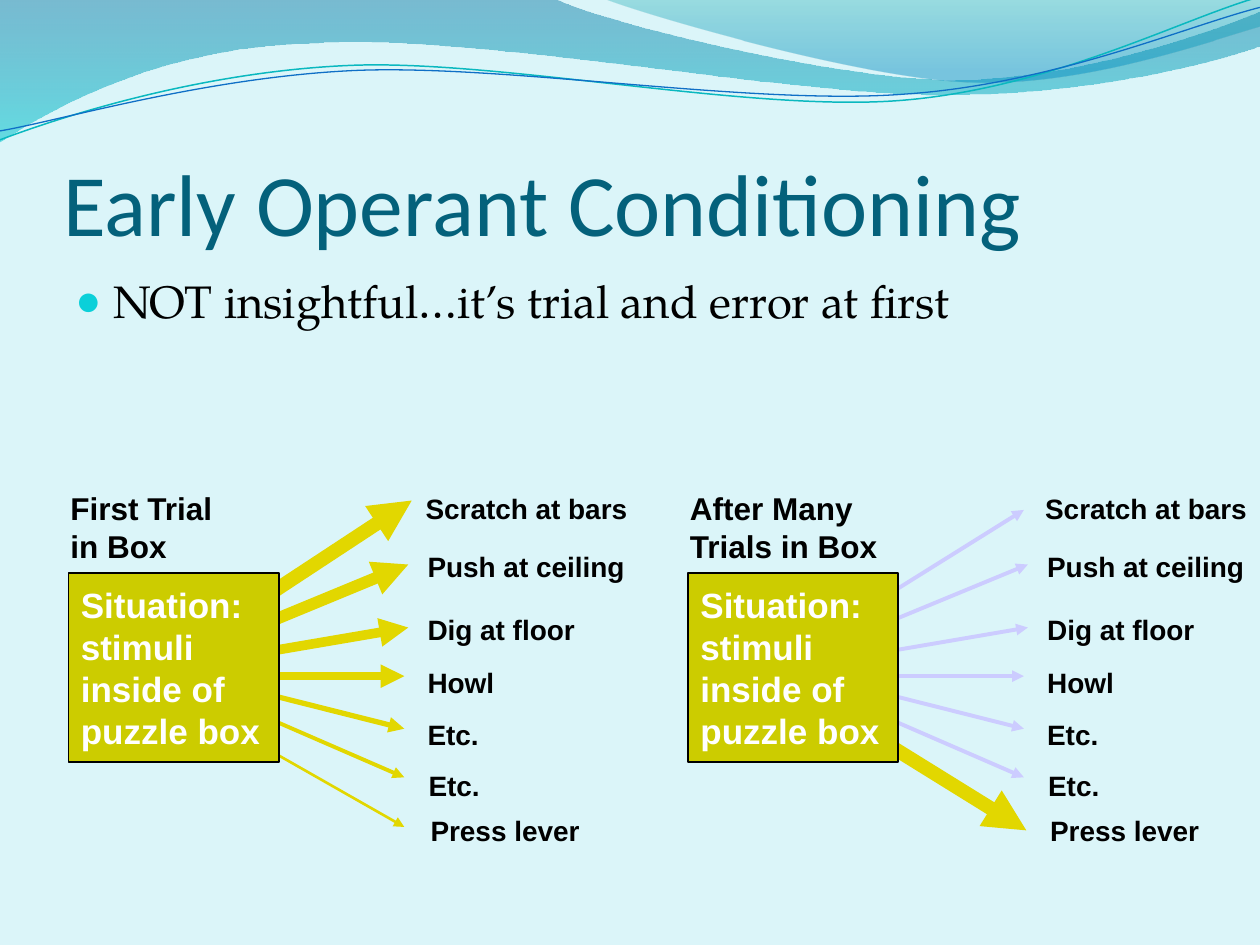
from dataclasses import dataclass

from lxml import etree
from pptx import Presentation, util as u
from pptx.dml.color import RGBColor
from pptx.enum import shapes, text
from pptx.oxml import ns


@dataclass(frozen=True)
class Theme:
    background: str = "DBF5F9"
    title: str = "04617B"
    ink: str = "000000"
    box: str = "CCCC00"
    box_text: str = "FFFFFF"
    strong: str = "E2D700"
    weak: str = "CCCCFF"
    bullet: str = "0BD0D9"
    title_font: str = "Calibri"
    body_font: str = "TeX Gyre Pagella"
    label_font: str = "Arial"
    title_size: float = 50
    body_size: float = 26
    box_size: float = 20
    heading_size: float = 18
    label_size: float = 16


THEME = Theme()
PANEL_STEP = 12.49

WAVES = [
    ((0, 0), [
        [(11.18, -0.03)],
        [(12.09, 0.43), (16.87, 1.6), (19.25, 1.6)],
        [(21.67, 1.6), (24.33, 0.66), (25.4, 0.23)],
        [(25.43, 0.91)],
        [(24.97, 1.12), (22.1, 1.93), (18.95, 1.91)],
        [(15.8, 1.91), (9.7, 0.71), (6.53, 0.86)],
        [(3.28, 0.91), (1.17, 2.11), (-0.03, 2.87)],
    ], [(0, "0074A1", 45), (1, "00C6CF", 55)]),
    ((12.17, -0.03), [
        [(12.93, 0.28), (17.32, 1.57), (19.53, 1.65)],
        [(21.82, 1.75), (24.41, 0.81), (25.4, 0.53)],
        [(25.4, 0)],
    ], [(0, "00A1A9", 30), (0.8, "008BBF", 45)]),
]
WAVE_LINES = [
    ((0, 2.82), [
        [(1.22, 2.36), (4.01, 1.45), (7.04, 1.32)],
        [(10.03, 1.19), (15.06, 2.26), (18.11, 2.03)],
        [(21.16, 1.8), (23.83, 0.38), (25.35, -0.05)],
    ], "0AB8BF", 0.85),
    ((0, 2.64), [
        [(1.19, 2.44), (4.17, 1.55), (7.19, 1.42)],
        [(10.24, 1.3), (15.16, 2.13), (18.21, 1.9)],
        [(21.23, 1.7), (23.9, 0.53), (25.4, 0.15)],
    ], "0F6FC6", 0.75),
]
RESPONSES = [
    ("Scratch at bars", 8.33, 9.78, 4.6),
    ("Push at ceiling", 8.37, 10.95, 4.5),
    ("Dig at floor", 8.37, 12.22, 3.51),
    ("Howl", 8.37, 13.3, 1.85),
    ("Etc.", 8.37, 14.35, 1.55),
    ("Etc.", 8.39, 15.37, 1.55),
    ("Press lever", 8.43, 16.28, 3.53),
]
MIDDLE_ARROWS = [
    (5.59, 12.47, 8.23, 11.38),
    (5.54, 13.11, 8.23, 12.65),
    (5.61, 13.63, 8.15, 13.63),
    (5.61, 14.05, 8.15, 14.69),
    (5.41, 14.48, 8.15, 15.67),
]
FIRST_ARROWS = [(5.41, 11.99, 8.3, 10.09), *MIDDLE_ARROWS, (5.41, 15.11, 8.15, 16.67)]
LATER_ARROWS = [(5.41, 11.99, 8.15, 10.28), *MIDDLE_ARROWS, (5.41, 15.01, 8.2, 16.74)]
FIRST_STYLES = [(THEME.strong, width) for width in (8, 6.75, 5.5, 4.5, 3, 2.25, 1.5)]
LATER_STYLES = [(THEME.weak, 2.25)] * 6 + [(THEME.strong, 8)]


def rgb(value):
    return RGBColor.from_string(value)


def add_xml(parent, tag, **attributes):
    return etree.SubElement(parent, ns.qn(tag), attributes)


def write_text(shape, words, font, size, color, bold=False, wrap=False):
    frame = shape.text_frame
    frame.text = words
    frame.word_wrap = wrap
    for paragraph in frame.paragraphs:
        paragraph.alignment = text.PP_ALIGN.LEFT
        for run in paragraph.runs:
            run.font.name = font
            run.font.size = u.Pt(size)
            run.font.bold = bold
            run.font.color.rgb = rgb(color)


def add_outline(slide, start, segments, close):
    builder = slide.shapes.build_freeform(u.Cm(start[0]), u.Cm(start[1]))
    points = [(u.Cm(x), u.Cm(y)) for segment in segments for x, y in segment]
    builder.add_line_segments(points, close=close)
    shape = builder.convert_to_shape()
    shape.shadow.inherit = False
    steps = shape._element.spPr.iter(ns.qn("a:lnTo"))
    steps = iter(list(steps))
    for segment in segments:
        first, *others = [next(steps) for _ in segment]
        if others:
            first.tag = ns.qn("a:cubicBezTo")
            for other in others:
                first.append(other[0])
                other.getparent().remove(other)
    return shape


def add_wave(slide, start, segments, stops):
    shape = add_outline(slide, start, segments, True)
    shape.line.fill.background()
    shape.fill.gradient()
    shape.fill.gradient_angle = 270
    for stop, (position, color, _) in zip(shape.fill.gradient_stops, stops):
        stop.position = position
        stop.color.rgb = rgb(color)
    colors = shape._element.spPr.iter(ns.qn("a:srgbClr"))
    for element, (_, _, opacity) in zip(colors, stops):
        add_xml(element, "a:alpha", val=str(opacity * 1000))


def add_wave_line(slide, start, segments, color, width):
    shape = add_outline(slide, start, segments, False)
    shape.fill.background()
    shape.line.color.rgb = rgb(color)
    shape.line.width = u.Pt(width)


def add_arrow(slide, left, ends, color, width):
    x1, y1, x2, y2 = ends
    arrow = slide.shapes.add_connector(
        shapes.MSO_CONNECTOR.STRAIGHT,
        u.Cm(left + x1), u.Cm(y1), u.Cm(left + x2), u.Cm(y2),
    )
    arrow.line.color.rgb = rgb(color)
    arrow.line.width = u.Pt(width)
    add_xml(arrow.line._get_or_add_ln(), "a:tailEnd", type="triangle")
    add_xml(arrow._element.spPr, "a:effectLst")


def add_label(slide, words, left, top, width, height, size):
    label = slide.shapes.add_textbox(u.Cm(left), u.Cm(top), u.Cm(width), u.Cm(height))
    write_text(label, words, THEME.label_font, size, THEME.ink, bold=True)


def add_situation(slide, left):
    box = slide.shapes.add_shape(
        shapes.MSO_SHAPE.RECTANGLE, u.Cm(left), u.Cm(11.55), u.Cm(4.24), u.Cm(3.81))
    box.shadow.inherit = False
    box.fill.solid()
    box.fill.fore_color.rgb = rgb(THEME.box)
    box.line.color.rgb = rgb(THEME.ink)
    box.line.width = u.Pt(1)
    box.text_frame.vertical_anchor = text.MSO_ANCHOR.MIDDLE
    write_text(box, "Situation:\nstimuli\ninside of\npuzzle box",
               THEME.label_font, THEME.box_size, THEME.box_text, bold=True)


def add_panel(slide, left, heading, heading_width, arrows, styles):
    for ends, (color, width) in zip(arrows, styles):
        add_arrow(slide, left, ends, color, width)
    for words, x, top, width in RESPONSES:
        add_label(slide, words, left + x, top, width, 0.94, THEME.label_size)
    add_situation(slide, left + 1.38)
    add_label(slide, heading, left + 1.17, 9.73, heading_width, 1.78, THEME.heading_size)


def set_title(slide, words):
    title = slide.shapes.title
    title.left, title.top, title.width, title.height = map(u.Cm, (1.27, 1.95, 22.86, 3.17))
    frame = title.text_frame
    frame.auto_size = text.MSO_AUTO_SIZE.NONE
    frame.vertical_anchor = text.MSO_ANCHOR.BOTTOM
    frame.margin_left = frame.margin_right = frame.margin_bottom = 0
    write_text(title, words, THEME.title_font, THEME.title_size, THEME.title, wrap=True)
    slide.shapes._spTree.append(title._element)


def add_bullet(slide, words):
    body = slide.shapes.add_textbox(u.Cm(1.27), u.Cm(5.38), u.Cm(22.86), u.Cm(12.19))
    write_text(body, words, THEME.body_font, THEME.body_size, THEME.ink, wrap=True)
    properties = body.text_frame.paragraphs[0]._p.get_or_add_pPr()
    properties.set("marL", str(u.Cm(0.76)))
    properties.set("indent", str(-u.Cm(0.76)))
    add_xml(add_xml(properties, "a:buClr"), "a:srgbClr", val=THEME.bullet)
    add_xml(properties, "a:buSzPct", val="95000")
    add_xml(properties, "a:buFont", typeface=THEME.label_font)
    add_xml(properties, "a:buChar", char="●")


def main():
    presentation = Presentation()
    presentation.slide_width, presentation.slide_height = u.Cm(25.4), u.Cm(19.05)
    slide = presentation.slides.add_slide(presentation.slide_layouts[5])
    slide.background.fill.solid()
    slide.background.fill.fore_color.rgb = rgb(THEME.background)
    for wave in WAVES:
        add_wave(slide, *wave)
    for wave_line in WAVE_LINES:
        add_wave_line(slide, *wave_line)
    set_title(slide, "Early Operant Conditioning")
    add_bullet(slide, "NOT insightful…it’s trial and error at first")
    add_panel(slide, 0, "First Trial\nin Box", 3.4, FIRST_ARROWS, FIRST_STYLES)
    add_panel(slide, PANEL_STEP, "After Many\nTrials in Box", 4.32, LATER_ARROWS, LATER_STYLES)
    presentation.save("out.pptx")


if __name__ == "__main__":
    main()
